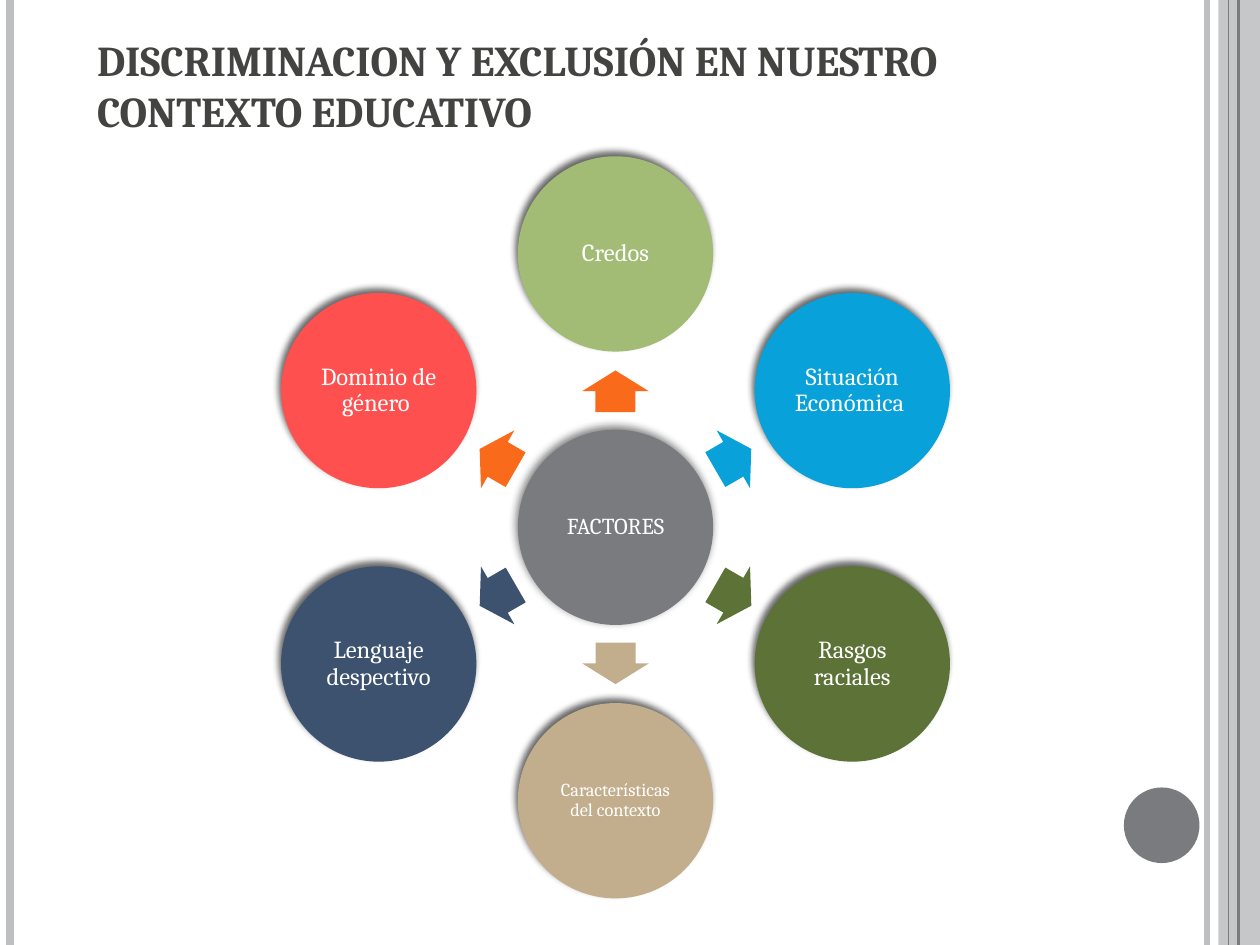
import math
import pptx
import pptx.util
import pptx.dml.color
import pptx.enum.shapes
import pptx.enum.text
import pptx.oxml
import pptx.oxml.ns
from lxml import etree

Inches = pptx.util.Inches
Pt = pptx.util.Pt
SHAPE = pptx.enum.shapes.MSO_SHAPE
ALIGN = pptx.enum.text.PP_ALIGN
ANCHOR = pptx.enum.text.MSO_ANCHOR
qn = pptx.oxml.ns.qn


def rgb(value):
    return pptx.dml.color.RGBColor.from_string(value)


def add_solid(kind, center_x, center_y, width, height, color):
    shape = slide.shapes.add_shape(
        kind, Inches(center_x - width / 2), Inches(center_y - height / 2),
        Inches(width), Inches(height))
    shape.shadow.inherit = False
    shape.fill.solid()
    shape.fill.fore_color.rgb = rgb(color)
    shape.line.fill.background()
    return shape


presentation = pptx.Presentation()
presentation.slide_width = Inches(10)
presentation.slide_height = Inches(7.5)
slide = presentation.slides.add_slide(presentation.slide_layouts[5])

# Edge decoration: side band, vertical rules and corner disc
band = add_solid(SHAPE.RECTANGLE, 9.835, 3.75, 0.33, 7.5, "BEBFC0")
band_color = band.fill._xPr.find(qn("a:solidFill"))[0]
etree.SubElement(band_color, qn("a:alpha"), val="87000")

for x, color, weight in [(9.58, "BEBFC0", 3), (0.08, "BEBFC0", 4.5),
                         (9.83, "797B7E", 1.5), (9.75, "797B7E", 0.75)]:
    rule = slide.shapes.add_connector(
        pptx.enum.shapes.MSO_CONNECTOR.STRAIGHT,
        Inches(x), Inches(0), Inches(x), Inches(7.5))
    rule.line.color.rgb = rgb(color)
    rule.line.width = Pt(weight)
    etree.SubElement(rule._element.spPr, qn("a:effectLst"))

add_solid(SHAPE.OVAL, 9.22, 6.55, 0.6, 0.6, "797B7E")

# Title
title = slide.shapes.title
title_place = {"left": 0.67, "top": 0.29, "width": 8.17, "height": 1.25}
for name, value in title_place.items():
    setattr(title, name, Inches(value))
title.text_frame.text = "DISCRIMINACION Y EXCLUSIÓN EN NUESTRO CONTEXTO EDUCATIVO"
title_frame = {"vertical_anchor": ANCHOR.BOTTOM, "word_wrap": True,
               "auto_size": pptx.enum.text.MSO_AUTO_SIZE.NONE,
               "margin_bottom": Inches(0.46)}
for name, value in title_frame.items():
    setattr(title.text_frame, name, value)
heading = title.text_frame.paragraphs[0]
heading.alignment = ALIGN.LEFT
title_font = {"name": "Cambria", "size": Pt(24.3), "bold": True}
for name, value in title_font.items():
    setattr(heading.runs[0].font, name, value)
heading.runs[0].font.color.rgb = rgb("434342")

# Radial diagram: hub, then factors clockwise from the top
HUB_X, HUB_Y = 4.885, 4.185
DISC = 1.55
DISC_RADIUS, ARROW_RADIUS = 2.17, 1.08
# label, disc colour, arrow colour, text size
factors = [
    ("FACTORES", "797B7E", None, 13),
    ("Credos", "A2BC75", "F96A1B", 14),
    ("Situación Económica ", "08A1D9", "08A1D9", 14),
    ("Rasgos raciales", "5C7237", "5C7237", 14),
    ("Características del contexto", "C2AD8D", "C2AD8D", 10.5),
    ("Lenguaje despectivo", "3C526F", "3C526F", 14),
    ("Dominio de género ", "FF5050", "F96A1B", 14),
]
label_frame = {"word_wrap": True, "vertical_anchor": ANCHOR.MIDDLE}
for side in ("left", "top", "right", "bottom"):
    label_frame["margin_" + side] = Inches(0.02)

for position, (label, color, arrow_color, size) in enumerate(factors):
    is_hub = arrow_color is None
    degrees = (position - 1) * 60 - 90
    dx, dy = math.cos(math.radians(degrees)), math.sin(math.radians(degrees))

    # Arrow pointing outward from the hub
    if not is_hub:
        arrow = add_solid(SHAPE.RIGHT_ARROW, HUB_X + ARROW_RADIUS * dx,
                          HUB_Y + ARROW_RADIUS * dy, 0.33, 0.53, arrow_color)
        arrow.adjustments[0] = 0.6
        arrow.adjustments[1] = 0.5
        arrow.rotation = degrees % 360

    # Disc with a soft shadow
    radius = 0 if is_hub else DISC_RADIUS
    disc = add_solid(SHAPE.OVAL, HUB_X + radius * dx, HUB_Y + radius * dy,
                     DISC, DISC, color)
    blur, distance, opacity = (5, 2, 50) if is_hub else (4, 3, 60)
    shadow = etree.SubElement(
        disc._element.spPr.find(qn("a:effectLst")), qn("a:outerShdw"),
        blurRad=str(Pt(blur)), dist=str(Pt(distance)),
        dir=str(245 * 60000), algn="ctr", rotWithShape="0")
    shade = etree.SubElement(shadow, qn("a:srgbClr"), val="000000")
    etree.SubElement(shade, qn("a:alpha"), val=str(opacity * 1000))

    # Label
    for name, value in label_frame.items():
        setattr(disc.text_frame, name, value)
    paragraph = disc.text_frame.paragraphs[0]
    paragraph.alignment = ALIGN.CENTER
    paragraph.line_spacing = 0.9
    run = paragraph.add_run()
    run.text = label
    run.font.name = "Cambria"
    run.font.size = Pt(size)
    run.font.color.rgb = rgb("FFFFFF")

presentation.save("out.pptx")
